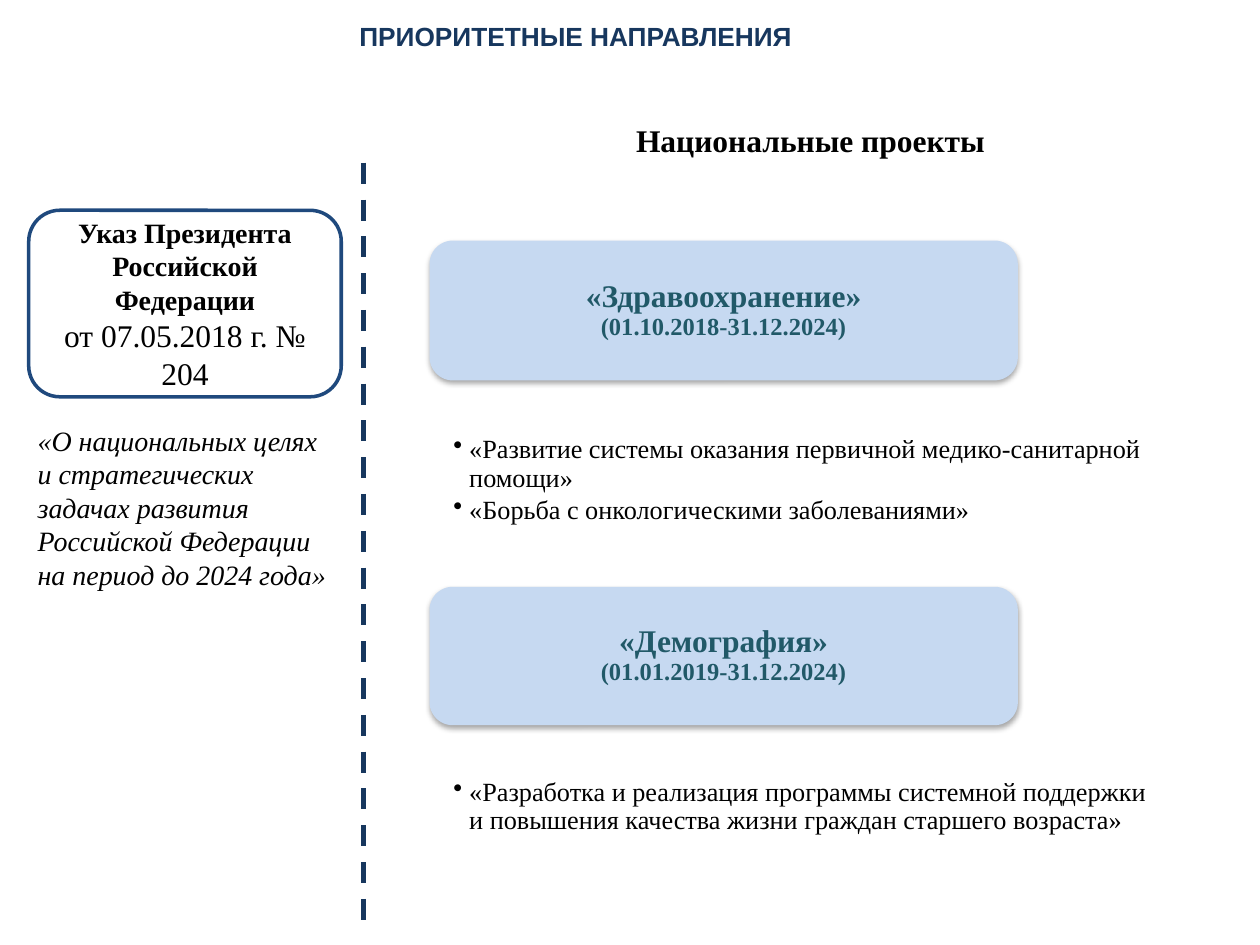
import pptx
import pptx.util
import pptx.dml.color
import pptx.enum.dml
import pptx.enum.shapes
import pptx.enum.text
import pptx.oxml
import pptx.oxml.ns

Cm, Pt = pptx.util.Cm, pptx.util.Pt
RGBColor = pptx.dml.color.RGBColor
Align = pptx.enum.text.PP_ALIGN
Anchor = pptx.enum.text.MSO_ANCHOR
ShapeType = pptx.enum.shapes.MSO_SHAPE

BLACK = RGBColor(0x00, 0x00, 0x00)
WHITE = RGBColor(0xFF, 0xFF, 0xFF)
NAVY = RGBColor(0x17, 0x37, 0x5E)
BLUE = RGBColor(0x1F, 0x49, 0x7D)
PALE_BLUE = RGBColor(0xC6, 0xD9, 0xF1)
TEAL = RGBColor(0x21, 0x59, 0x68)

SHADOW = (
    '<a:effectLst %s><a:outerShdw blurRad="39370" dist="22860" dir="5400000" '
    'rotWithShape="0"><a:srgbClr val="000000"><a:alpha val="35000"/></a:srgbClr>'
    "</a:outerShdw></a:effectLst>" % pptx.oxml.ns.nsdecls("a")
)


def write_text(shape, paragraphs, font="Times New Roman", color=BLACK, italic=False,
               align=Align.LEFT, anchor=Anchor.TOP, margins=(0.25, 0.13, 0.25, 0.13),
               line_spacing=1.0, space_after=0, bullet=False):
    """Each paragraph is a list of lines; each line is (text, size, bold)."""
    frame = shape.text_frame
    frame.word_wrap = True
    frame.vertical_anchor = anchor
    (frame.margin_left, frame.margin_top,
     frame.margin_right, frame.margin_bottom) = [Cm(margin) for margin in margins]
    for index, lines in enumerate(paragraphs):
        paragraph = frame.add_paragraph() if index else frame.paragraphs[0]
        paragraph.alignment = align
        paragraph.line_spacing = line_spacing
        paragraph.space_before = Pt(0)
        paragraph.space_after = Pt(space_after)
        if bullet:
            properties = paragraph._p.get_or_add_pPr()
            properties.set("marL", str(Cm(0.32)))
            properties.set("indent", str(Cm(-0.32)))
            properties.append(pptx.oxml.parse_xml(
                '<a:buChar %s char="•"/>' % pptx.oxml.ns.nsdecls("a")))
        for number, (text, size, bold) in enumerate(lines):
            if number:
                paragraph.add_line_break()
            run = paragraph.add_run()
            run.text = text
            run.font.name = font
            run.font.size = Pt(size)
            run.font.bold = bold
            run.font.italic = italic
            run.font.color.rgb = color


def add_box(slide, kind, left, top, width, height, fill):
    shape = slide.shapes.add_shape(kind, Cm(left), Cm(top), Cm(width), Cm(height))
    shape.shadow.inherit = False
    shape.fill.solid()
    shape.fill.fore_color.rgb = fill
    shape.line.fill.background()
    return shape


presentation = pptx.Presentation()
presentation.slide_width = Cm(25.4)
presentation.slide_height = Cm(19.05)
slide = presentation.slides.add_slide(presentation.slide_layouts[5])

# Title
title = slide.shapes.title
title.left, title.top, title.width, title.height = Cm(4.8), Cm(0), Cm(13.61), Cm(1.45)
write_text(title, [[("ПРИОРИТЕТНЫЕ НАПРАВЛЕНИЯ", 15, True)]], font="Arial", color=NAVY,
           align=Align.CENTER, anchor=Anchor.MIDDLE)

# National projects: a panel of bullets under each heading card
projects = [
    (5.03, 5.84, 4.85, 2.82, "«Здравоохранение»", "(01.10.2018-31.12.2024)",
     ["«Развитие системы оказания первичной медико-санитарной помощи»",
      "«Борьба с онкологическими заболеваниями»"]),
    (11.94, 5.26, 11.83, 2.79, "«Демография»", "(01.01.2019-31.12.2024)",
     ["«Разработка и реализация программы системной поддержки и повышения "
      "качества жизни граждан старшего возраста»"]),
]
for panel_top, panel_height, card_top, card_height, name, dates, goals in projects:
    panel = add_box(slide, ShapeType.RECTANGLE, 7.82, panel_top, 16.94, panel_height, WHITE)
    write_text(panel, [[(goal, 15, False)] for goal in goals], bullet=True,
               margins=(1.32, 3.76, 1.32, 0.3), line_spacing=0.9, space_after=2.25)
    card = add_box(slide, ShapeType.ROUNDED_RECTANGLE, 8.66, card_top, 11.86, card_height,
                   PALE_BLUE)
    properties = card._element.spPr
    properties.replace(properties.find(pptx.oxml.ns.qn("a:effectLst")),
                       pptx.oxml.parse_xml(SHADOW))
    write_text(card, [[(name, 18, True), (dates, 14, True)]], color=TEAL,
               align=Align.CENTER, anchor=Anchor.MIDDLE,
               margins=(0.46, 0, 0.46, 0), line_spacing=0.9)

# Dashed divider
divider = slide.shapes.add_connector(pptx.enum.shapes.MSO_CONNECTOR.STRAIGHT,
                                     Cm(7.33), Cm(3.28), Cm(7.33), Cm(18.54))
divider.line.color.rgb = NAVY
divider.line.width = Pt(3)
divider.line.dash_style = pptx.enum.dml.MSO_LINE.DASH
divider._element.spPr.append(
    pptx.oxml.parse_xml("<a:effectLst %s/>" % pptx.oxml.ns.nsdecls("a")))

# Decree subject and heading of the projects column
subject = slide.shapes.add_textbox(Cm(0.58), Cm(8.43), Cm(6.3), Cm(3.61))
write_text(subject, [[("«О национальных целях и стратегических задачах развития "
                       "Российской Федерации на период до 2024 года»", 16, False)]],
           italic=True, margins=(0.18, 0.1, 0.18, 0.1))
heading = slide.shapes.add_textbox(Cm(7.87), Cm(2.31), Cm(16.94), Cm(1.02))
write_text(heading, [[("Национальные проекты", 18, True)]], align=Align.CENTER)

# Decree box
decree = add_box(slide, ShapeType.ROUNDED_RECTANGLE, 0.58, 4.24, 6.3, 3.76, WHITE)
decree.line.color.rgb = BLUE
decree.line.width = Pt(2)
write_text(decree, [[("Указ Президента Российской Федерации", 16, True),
                     ("от 07.05.2018 г. № 204", 18, False)]],
           align=Align.CENTER, anchor=Anchor.MIDDLE, margins=(0.18, 0.1, 0.18, 0.1))

presentation.save("out.pptx")
